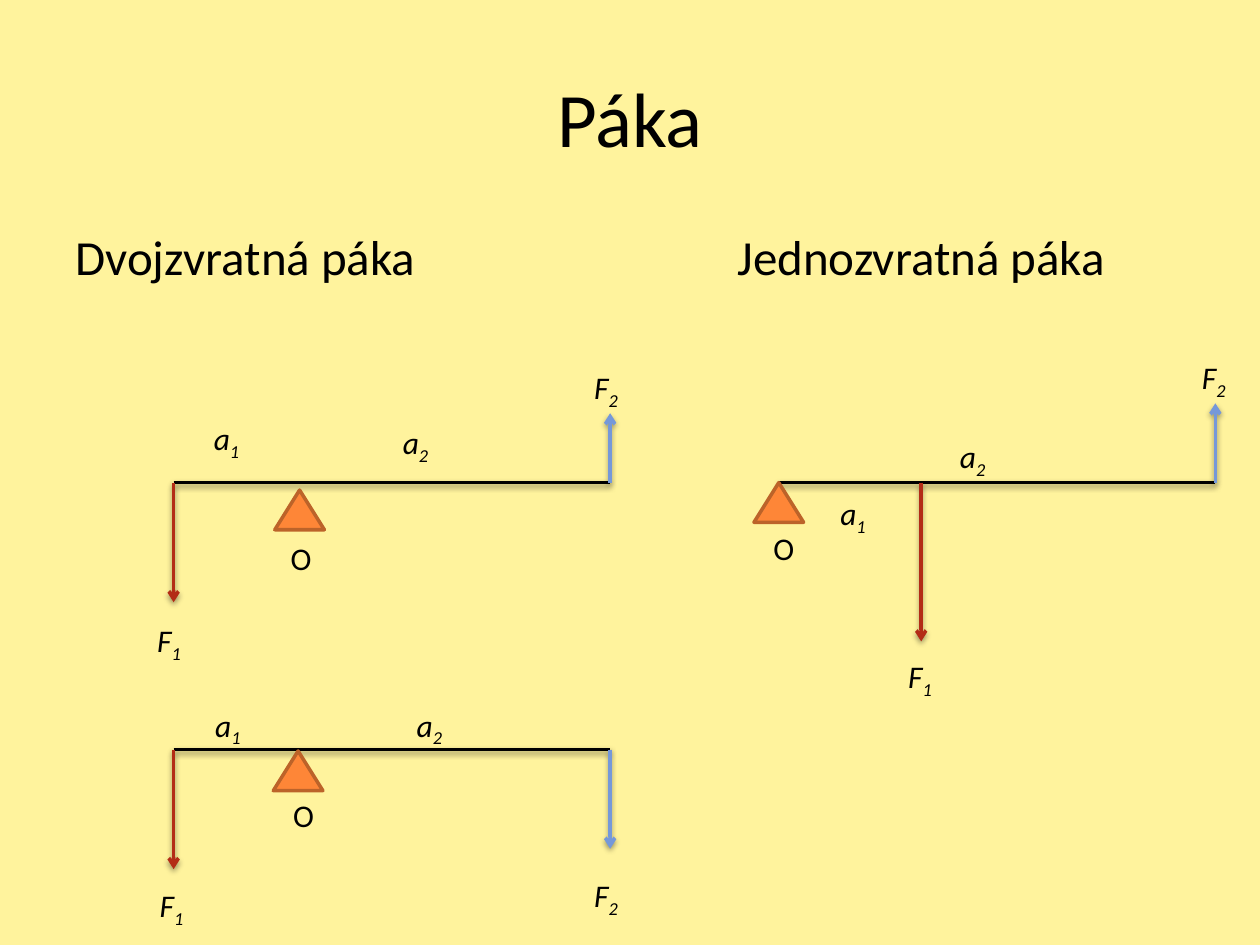
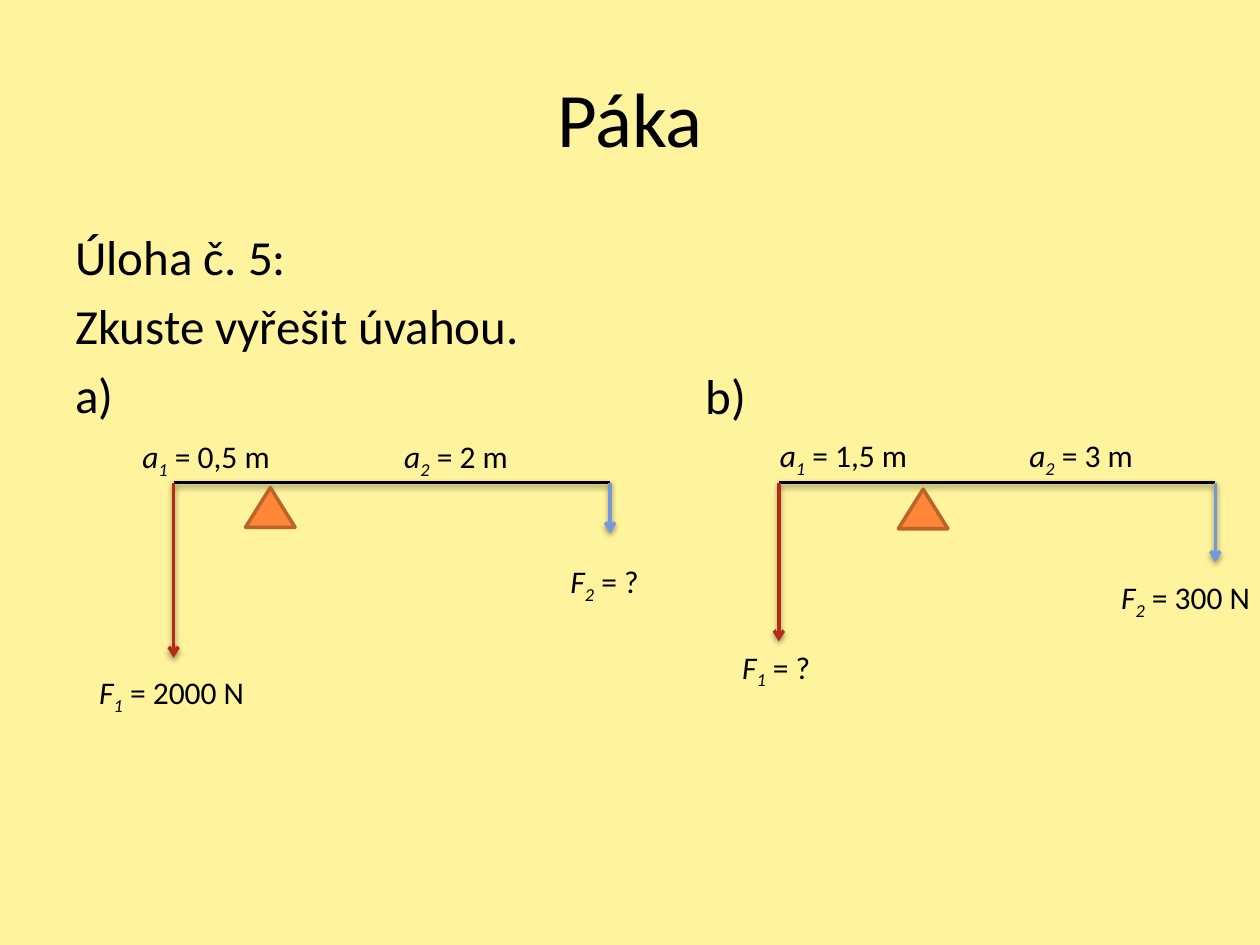
from dataclasses import dataclass

from lxml.etree import SubElement as Sub
from pptx import Presentation
from pptx.dml.color import RGBColor as Rgb
from pptx.enum.shapes import MSO_CONNECTOR as Link, MSO_SHAPE as Shape
from pptx.enum.text import MSO_ANCHOR as Anchor, MSO_AUTO_SIZE as Fit, PP_ALIGN as Align
from pptx.oxml.ns import qn
from pptx.util import Cm, Pt


@dataclass(frozen=True)
class Theme:
    face: str = "Calibri"
    back: str = "FFF39D"
    ink: str = "000000"
    load: str = "B32C16"
    effort: str = "7598D9"
    prop: str = "FE8637"
    edge: str = "BC6329"
    head: int = 44
    body: int = 28
    note: int = 18
    line: int = 2
    beam: float = 8.8


class Deck:
    def __init__(self, theme):
        self.theme = theme
        self.prs = Presentation()
        self.prs.slide_width, self.prs.slide_height = Cm(25.4), Cm(19.05)
        fill = self.prs.slide_master.background.fill
        fill.solid()
        fill.fore_color.rgb = Rgb.from_string(theme.back)
        self.slide = None

    def font(self, para, size):
        para.font.name = self.theme.face
        para.font.size = Pt(size)
        para.font.color.rgb = Rgb.from_string(self.theme.ink)

    def page(self, title):
        self.slide = self.prs.slides.add_slide(self.prs.slide_layouts[5])
        box = self.slide.shapes.title
        box.left, box.top, box.width, box.height = Cm(1.27), Cm(0.76), Cm(22.86), Cm(3.18)
        box.text_frame.text = title
        box.text_frame.vertical_anchor = Anchor.MIDDLE
        para = box.text_frame.paragraphs[0]
        para.alignment = Align.CENTER
        self.font(para, self.theme.head)

    def body(self, lines, x, y, w):
        box = self.slide.shapes.add_textbox(Cm(x), Cm(y), Cm(w), Cm(1.4 * len(lines)))
        frame = box.text_frame
        frame.word_wrap = True
        frame.text = "\n".join(lines)
        for para in frame.paragraphs:
            para.space_before = Pt(self.theme.body * 0.2)
            self.font(para, self.theme.body)

    def label(self, text, x, y, w):
        box = self.slide.shapes.add_textbox(Cm(x), Cm(y), Cm(w), Cm(1.02))
        frame = box.text_frame
        frame.word_wrap = False
        frame.auto_size = Fit.SHAPE_TO_FIT_TEXT
        para = frame.paragraphs[0]
        self.font(para, self.theme.note)
        name, index, value = text[:1], text[1:2], text[2:]
        para.add_run().text = name
        if index:
            para.runs[0].font.italic = True
            low = para.add_run()
            low.text = index
            low.font.italic = True
            low.font._element.set("baseline", "-25000")
        if value:
            para.add_run().text = value

    def line(self, start, end, color, arrow=False):
        ends = [Cm(n) for n in (*start, *end)]
        link = self.slide.shapes.add_connector(Link.STRAIGHT, *ends)
        link.line.color.rgb = Rgb.from_string(color)
        link.line.width = Pt(self.theme.line)
        if arrow:
            Sub(link.line._get_or_add_ln(), qn("a:tailEnd"), type="arrow")
        glow = Sub(link._element.spPr, qn("a:effectLst"))
        cast = Sub(glow, qn("a:outerShdw"), blurRad="40000", dist="20000",
                   dir="5400000", rotWithShape="0")
        tint = Sub(cast, qn("a:srgbClr"), val=self.theme.ink)
        Sub(tint, qn("a:alpha"), val="38000")

    def prop(self, x, y):
        peak = self.slide.shapes.add_shape(
            Shape.ISOSCELES_TRIANGLE, Cm(x), Cm(y), Cm(1), Cm(0.8))
        peak.shadow.inherit = False
        peak.fill.solid()
        peak.fill.fore_color.rgb = Rgb.from_string(self.theme.prop)
        peak.line.color.rgb = Rgb.from_string(self.theme.edge)
        peak.line.width = Pt(self.theme.line)

    def lever(self, x, y, prop, load, effort, shift=0):
        end = x + self.theme.beam
        self.line((x, y), (end, y), self.theme.ink)
        self.prop(x + prop[0], y + prop[1])
        self.line((x + shift, y), (x + shift, y + load), self.theme.load, True)
        self.line((end, y), (end, y + effort), self.theme.effort, True)


def kinds(deck):
    deck.page("Páka")
    deck.body(["Dvojzvratná páka"], 1.27, 4.45, 11)
    deck.body(["Jednozvratná páka"], 14.62, 4.45, 9.5)
    deck.lever(3.5, 9.73, (2.04, 0.15), 2.41, -1.4)
    deck.lever(15.7, 9.73, (-0.5, 0), 3.2, -1.6, shift=2.87)
    deck.lever(3.5, 15.11, (2.01, 0.03), 2.41, 2)
    for spot in (
        ("F2", 11.73, 7.29, 1.12),
        ("F1", 2.92, 12.4, 1.17),
        ("a2", 7.87, 8.41, 1.22),
        ("a1", 4.06, 8.33, 1.07),
        ("O", 5.61, 10.74, 0.86),
        ("a1", 16.69, 9.83, 1.07),
        ("a2", 19.1, 8.69, 1.07),
        ("F1", 18.06, 13.13, 1.02),
        ("F2", 23.98, 7.09, 1.02),
        ("O", 15.34, 10.54, 0.86),
        ("a1", 4.09, 14.1, 1.07),
        ("a2", 8.15, 14.1, 1.22),
        ("F1", 2.97, 17.73, 1.17),
        ("F2", 11.73, 17.53, 1.12),
        ("O", 5.66, 15.93, 0.86),
    ):
        deck.label(*spot)


def task(deck):
    deck.page("Páka")
    deck.body(["Úloha č. 5:", "Zkuste vyřešit úvahou.", "a)"], 1.27, 4.45, 12)
    deck.body(["b)"], 13.97, 7.25, 3)
    deck.lever(3.5, 9.73, (1.45, 0.1), 3.53, 1.02)
    deck.lever(15.7, 9.73, (2.41, 0.13), 3.2, 1.6)
    for spot in (
        ("F2 = ?", 11.25, 11.2, 2.03),
        ("F1 = 2000 N", 1.75, 13.44, 3.51),
        ("a2 = 2 m", 7.9, 8.69, 2.67),
        ("a1 = 0,5 m", 2.62, 8.69, 3.15),
        ("a1 = 1,5 m", 15.47, 8.66, 3.15),
        ("a2 = 3 m", 20.5, 8.66, 2.67),
        ("F1 = ?", 14.71, 12.93, 1.93),
        ("F2 = 300 N", 22.35, 11.53, 3.18),
    ):
        deck.label(*spot)


def main():
    deck = Deck(Theme())
    kinds(deck)
    task(deck)
    deck.prs.save("out.pptx")


if __name__ == "__main__":
    main()
